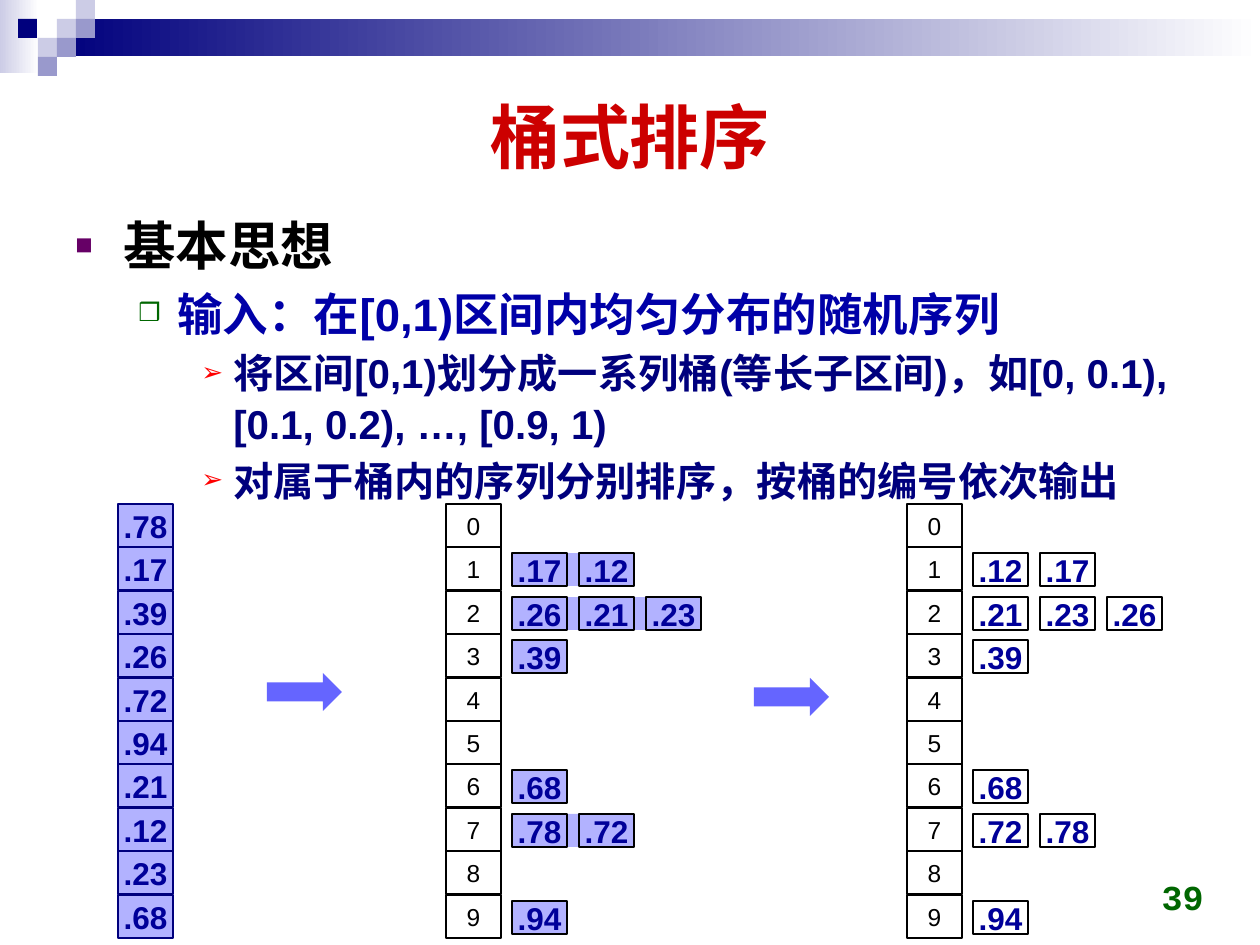
from dataclasses import dataclass
from typing import Optional

import lxml.etree
import pptx
import pptx.dml.color
import pptx.enum.shapes
import pptx.enum.text
import pptx.oxml.ns
import pptx.util

SHAPES = pptx.enum.shapes.MSO_SHAPE
ALIGN = pptx.enum.text.PP_ALIGN
ANCHOR = pptx.enum.text.MSO_ANCHOR
PX_PER_INCH = 126


@dataclass(frozen=True)
class Theme:
    font: str = "Arial"
    number_font: str = "Courier New"
    title: str = "CC0000"
    black: str = "000000"
    white: str = "FFFFFF"
    navy: str = "00007D"
    value: str = "000099"
    topic: str = "0000A8"
    green: str = "006600"
    purple: str = "660066"
    red: str = "FF0000"
    pale: str = "CCCCE6"
    mid: str = "9999CC"
    highlight: str = "B2B2FF"
    arrow: str = "6565FF"
    title_size: int = 40
    number_size: int = 20
    value_size: int = 18
    index_size: int = 14


THEME = Theme()


@dataclass(frozen=True)
class Area:
    left: int
    top: int
    width: int
    height: int


@dataclass(frozen=True)
class Style:
    size: int
    color: str
    bold: bool = True
    font: str = THEME.font


@dataclass(frozen=True)
class Point:
    text: str
    style: Style
    indent: int
    hanging: int
    bullet: str
    bullet_color: str
    bullet_percent: int


@dataclass(frozen=True)
class BucketColumn:
    left: int
    buckets: dict[int, list[str]]
    fill: Optional[str] = None


VALUE = Style(THEME.value_size, THEME.value)
INDEX = Style(THEME.index_size, THEME.black, bold=False)
DETAIL = Style(23, THEME.navy)
ROWS = 10
ROWS_TOP, ROWS_HEIGHT = 504, 434
CELL_WIDTH, CELL_HEIGHT = 55, 43
ITEM_OFFSET, ITEM_DROP, ITEM_PITCH, ITEM_HEIGHT = 66, 6, 67, 33

POINTS = [
    Point("基本思想", Style(30, THEME.black), 48, 48, "■", THEME.purple, 55),
    Point("输入：在[0,1)区间内均匀分布的随机序列", Style(26, THEME.topic),
          102, 39, "❒", THEME.green, 55),
    Point("将区间[0,1)划分成一系列桶(等长子区间)，如[0, 0.1), [0.1, 0.2), …, [0.9, 1)",
          DETAIL, 158, 32, "➢", THEME.red, 65),
    Point("对属于桶内的序列分别排序，按桶的编号依次输出",
          DETAIL, 158, 32, "➢", THEME.red, 65),
]
SEQUENCE = [".78", ".17", ".39", ".26", ".72", ".94", ".21", ".12", ".23", ".68"]
BUCKETS = {
    row: [value for value in SEQUENCE if value[1] == str(row)] for row in range(ROWS)
}
SORTED_BUCKETS = {row: sorted(values) for row, values in BUCKETS.items()}
COLUMNS = [
    BucketColumn(446, BUCKETS, THEME.highlight),
    BucketColumn(907, SORTED_BUCKETS),
]
ARROWS = [Area(267, 673, 75, 38), Area(754, 678, 75, 38)]
TILES = [
    (57, 19, THEME.pale), (76, 0, THEME.pale), (76, 19, THEME.mid),
    (38, 38, THEME.pale), (18, 19, THEME.navy), (57, 38, THEME.mid),
    (38, 57, THEME.mid),
]


def px(length: int) -> int:
    return round(length * 914400 / PX_PER_INCH)


def rgb(color: str):
    return pptx.dml.color.RGBColor.from_string(color)


def row_top(row: int) -> int:
    return ROWS_TOP + round(row * ROWS_HEIGHT / ROWS)


def place(area: Area) -> tuple[int, int, int, int]:
    return px(area.left), px(area.top), px(area.width), px(area.height)


def set_text(para, text: str, style: Style, align) -> None:
    para.alignment = align
    para.add_run().text = text
    font = para.font
    font.name, font.size, font.bold = style.font, pptx.util.Pt(style.size), style.bold
    font.color.rgb = rgb(style.color)


def add_block(page, area: Area, fill: Optional[str] = None,
              line: Optional[str] = None, kind=SHAPES.RECTANGLE):
    box = page.shapes.add_shape(kind, *place(area))
    box.shadow.inherit = False
    if fill:
        box.fill.solid()
        box.fill.fore_color.rgb = rgb(fill)
    else:
        box.fill.background()
    if line:
        box.line.color.rgb = rgb(line)
        box.line.width = pptx.util.Pt(1)
    else:
        box.line.fill.background()
    return box


def add_fade(page, area: Area, color: str) -> None:
    """Draw a band that fades to white from left to right."""
    fill = add_block(page, area).fill
    fill.gradient()
    fill.gradient_angle = 0
    for stop, shade in zip(fill.gradient_stops, (color, THEME.white)):
        stop.color.rgb = rgb(shade)


def add_cell(page, area: Area, text: str, style: Style, line: str,
             fill: Optional[str] = None) -> None:
    frame = add_block(page, area, fill, line).text_frame
    frame.word_wrap = False
    frame.vertical_anchor = ANCHOR.MIDDLE
    set_text(frame.paragraphs[0], text, style, ALIGN.CENTER)


def add_text_frame(page, area: Area, anchor):
    frame = page.shapes.add_textbox(*place(area)).text_frame
    frame.word_wrap = True
    frame.vertical_anchor = anchor
    return frame


def add_bullet(para, point: Point) -> None:
    properties = para._p.get_or_add_pPr()
    properties.set("marL", str(px(point.indent)))
    properties.set("indent", str(-px(point.hanging)))

    def child(parent, tag: str, **attributes: str):
        return lxml.etree.SubElement(parent, pptx.oxml.ns.qn(tag), attributes)

    child(child(properties, "a:buClr"), "a:srgbClr", val=point.bullet_color)
    child(properties, "a:buSzPct", val=str(point.bullet_percent * 1000))
    child(properties, "a:buFont", typeface=THEME.font)
    child(properties, "a:buChar", char=point.bullet)


def add_points(page, area: Area) -> None:
    frame = add_text_frame(page, area, ANCHOR.TOP)
    for number, point in enumerate(POINTS):
        para = frame.add_paragraph() if number else frame.paragraphs[0]
        para.line_spacing = 1.05
        para.space_before = pptx.util.Pt(round(point.style.size * 0.15, 1))
        add_bullet(para, point)
        set_text(para, point.text, point.style, ALIGN.LEFT)


def add_bucket_column(page, column: BucketColumn) -> None:
    for row, values in column.buckets.items():
        top = row_top(row)
        add_cell(page, Area(column.left, top, CELL_WIDTH, CELL_HEIGHT),
                 str(row), INDEX, THEME.black)
        left, item_top = column.left + ITEM_OFFSET, top + ITEM_DROP
        if values and column.fill:
            width = CELL_WIDTH + (len(values) - 1) * ITEM_PITCH
            add_block(page, Area(left, item_top, width, ITEM_HEIGHT), column.fill)
        for number, value in enumerate(values):
            area = Area(left + number * ITEM_PITCH, item_top, CELL_WIDTH, ITEM_HEIGHT)
            add_cell(page, area, value, VALUE, THEME.black)


def main() -> None:
    deck = pptx.Presentation()
    deck.slide_width, deck.slide_height = px(1260), px(945)
    page = deck.slides.add_slide(deck.slide_layouts[6])

    add_fade(page, Area(0, 0, 39, 73), THEME.pale)
    add_fade(page, Area(57, 19, 1203, 37), THEME.navy)
    for left, top, color in TILES:
        add_block(page, Area(left, top, 19, 19), color)

    title = add_text_frame(page, Area(63, 63, 1134, 146), ANCHOR.MIDDLE)
    set_text(title.paragraphs[0], "桶式排序", Style(THEME.title_size, THEME.title),
             ALIGN.CENTER)
    add_points(page, Area(63, 204, 1134, 655))
    number = add_text_frame(page, Area(922, 861, 294, 63), ANCHOR.BOTTOM)
    set_text(number.paragraphs[0], "39",
             Style(THEME.number_size, THEME.green, font=THEME.number_font), ALIGN.RIGHT)

    for row, value in enumerate(SEQUENCE):
        add_cell(page, Area(118, row_top(row), CELL_WIDTH, CELL_HEIGHT), value, VALUE,
                 THEME.navy, THEME.highlight)
    for area in ARROWS:
        add_block(page, area, THEME.arrow, kind=SHAPES.RIGHT_ARROW)
    for column in COLUMNS:
        add_bucket_column(page, column)

    deck.save("out.pptx")


if __name__ == "__main__":
    main()
